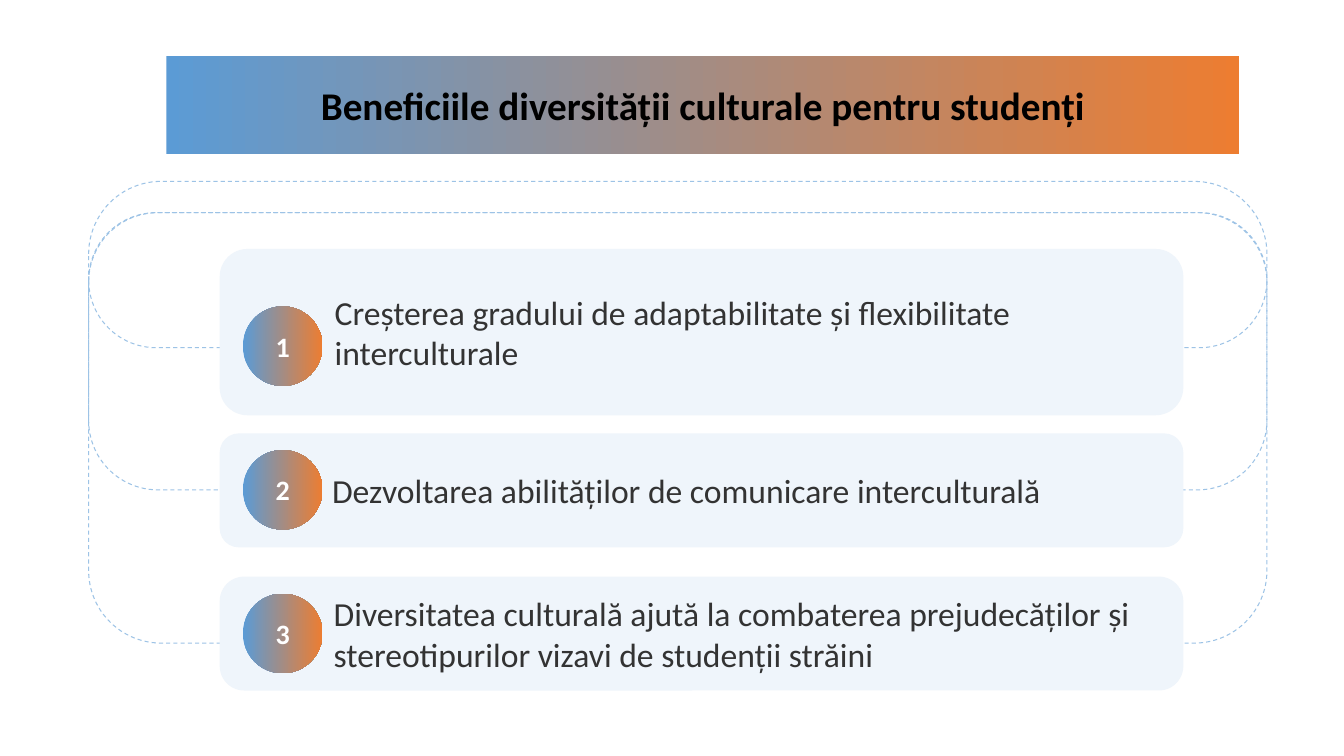
from pptx import Presentation
from pptx.dml.color import RGBColor
from pptx.enum.dml import MSO_LINE
from pptx.enum.shapes import MSO_SHAPE
from pptx.enum.text import MSO_ANCHOR, MSO_AUTO_SIZE, PP_ALIGN
from pptx.oxml import parse_xml
from pptx.oxml.ns import nsdecls
from pptx.util import Inches, Pt

WIDTH, HEIGHT = Inches(13.333), Inches(7.5)
BLUE = RGBColor(0x5B, 0x9B, 0xD5)
ORANGE = RGBColor(0xED, 0x7D, 0x31)
LOOP_BLUE = RGBColor(0x9D, 0xC3, 0xE6)
CARD_BLUE = RGBColor(0xEF, 0xF5, 0xFB)
DARK_GREY = RGBColor(0x33, 0x33, 0x33)
WHITE = RGBColor(0xFF, 0xFF, 0xFF)
BLACK = RGBColor(0, 0, 0)

TITLE = "Beneficiile diversității culturale pentru studenți"
LOOPS = [(28.13, 17.87, 0.5), (28.13, 36.67, 0.25), (24, 61.07, 0.157)]
BENEFITS = [
    (32.93, 22, 0.167, "Creșterea gradului de adaptabilitate și flexibilitate interculturale"),
    (57.33, 15.07, 0.167, "Dezvoltarea abilităților de comunicare interculturală"),
    (76.27, 15.07, 0.215, "Diversitatea culturală ajută la combaterea prejudecăților "
                          "și stereotipurilor vizavi de studenții străini"),
]
BADGE_TOP, BADGE_STEP, BADGE_SIZE = 40.53, 19, 10.53


def across(share):
    """Turn a percentage of the slide width into a length."""
    return round(WIDTH * share / 100)


def down(share):
    """Turn a percentage of the slide height into a length."""
    return round(HEIGHT * share / 100)


def add_plain(slide, kind, left, top, width, height):
    """Add a preset shape without shadow or outline."""
    shape = slide.shapes.add_shape(kind, left, top, width, height)
    shape.shadow.inherit = False
    shape.line.fill.background()
    return shape


def fill_gradient(shape):
    """Fill a shape from blue on the left to orange on the right."""
    shape.fill.gradient()
    shape.fill.gradient_angle = 0
    for stop, color, position in zip(shape.fill.gradient_stops, (BLUE, ORANGE), (0, 1)):
        stop.color.rgb = color
        stop.position = position


def write(shape, text, size, color, bold=False, align=PP_ALIGN.CENTER, wrap=True):
    """Write one vertically centred paragraph into a shape."""
    frame = shape.text_frame
    frame.text = text
    frame.word_wrap = wrap
    frame.auto_size = MSO_AUTO_SIZE.NONE
    frame.vertical_anchor = MSO_ANCHOR.MIDDLE
    paragraph = frame.paragraphs[0]
    paragraph.alignment = align
    font = paragraph.font
    font.name, font.size, font.bold = "Calibri", Pt(size), bold
    font.color.rgb = color


def add_title(slide):
    """Turn the title placeholder into the rounded gradient banner."""
    banner = slide.shapes.title
    banner.left, banner.top = across(12.38), down(7.47)
    banner.width, banner.height = across(79.8), down(12.93)
    banner.element.spPr.append(parse_xml(
        f'<a:prstGeom {nsdecls("a")} prst="roundRect"><a:avLst/></a:prstGeom>'))
    fill_gradient(banner)
    write(banner, TITLE, 28, BLACK, bold=True)


def add_loop(slide, top, height, rounding):
    """Add a dashed loop that runs behind the cards."""
    loop = add_plain(slide, MSO_SHAPE.ROUNDED_RECTANGLE,
                     across(6.6), down(top), across(87.67), down(height))
    loop.adjustments[0] = rounding
    loop.fill.background()
    loop.line.color.rgb = LOOP_BLUE
    loop.line.width = Pt(0.75)
    loop.line.dash_style = MSO_LINE.DASH


def add_card(slide, top, height, rounding, benefit):
    """Add a pale card that holds one benefit."""
    card = add_plain(slide, MSO_SHAPE.ROUNDED_RECTANGLE,
                     across(16.35), down(top), across(71.7), down(height))
    card.adjustments[0] = rounding
    card.fill.solid()
    card.fill.fore_color.rgb = CARD_BLUE
    card.text_frame.margin_left = across(7.95)
    write(card, benefit, 24, DARK_GREY, align=PP_ALIGN.LEFT)


def add_badge(slide, index):
    """Add the numbered circle of a card."""
    badge = add_plain(slide, MSO_SHAPE.OVAL, across(18.07),
                      down(BADGE_TOP + index * BADGE_STEP), down(BADGE_SIZE), down(BADGE_SIZE))
    fill_gradient(badge)
    write(badge, str(index + 1), 20, WHITE, bold=True, wrap=False)


def main():
    """Build the slide and save it."""
    deck = Presentation()
    deck.slide_width, deck.slide_height = WIDTH, HEIGHT
    slide = deck.slides.add_slide(deck.slide_layouts[5])
    add_title(slide)
    for loop in LOOPS:
        add_loop(slide, *loop)
    for index, benefit in enumerate(BENEFITS):
        add_card(slide, *benefit)
        add_badge(slide, index)
    deck.save("out.pptx")


if __name__ == "__main__":
    main()
